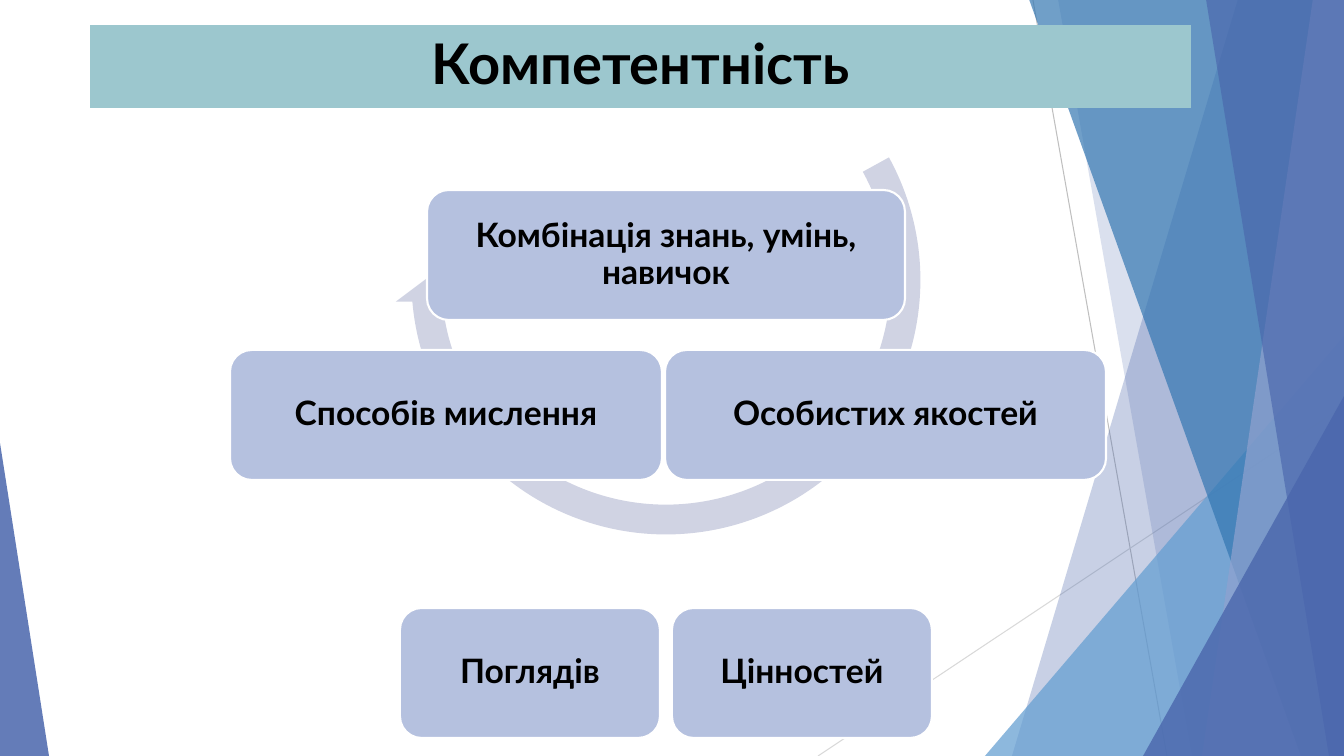
from dataclasses import dataclass

from pptx import Presentation
from pptx.dml.color import RGBColor
from pptx.enum.shapes import MSO_CONNECTOR, MSO_SHAPE
from pptx.enum.text import MSO_ANCHOR, PP_ALIGN
from pptx.oxml.ns import qn
from pptx.oxml.xmlchemy import OxmlElement
from pptx.util import Pt

WIDTH, HEIGHT = 1344, 756
SCALE = 12192000 / WIDTH


@dataclass(frozen=True)
class Theme:
    font: str = "Lato"
    text: str = "000000"
    banner: str = "9CC7CE"
    box: str = "B5C1DF"
    box_line: str = "FFFFFF"
    arrow: str = "D0D3E3"
    blue: str = "4A66AC"
    sky: str = "629DD1"
    ocean: str = "3477B2"
    mist: str = "90A2CF"
    ray_dark: str = "BFBFBF"
    ray_light: str = "D9D9D9"
    title_size: int = 40
    box_size: int = 24


THEME = Theme()


def px(n):
    return round(n * SCALE)


def rgb(color):
    return RGBColor.from_string(color)


def paint(sp, color, opacity=100):
    """Flat fill without outline or shadow."""
    sp.shadow.inherit = False
    sp.fill.solid()
    sp.fill.fore_color.rgb = rgb(color)
    if opacity < 100:
        alpha = OxmlElement("a:alpha")
        alpha.set("val", str(opacity * 1000))
        next(sp.element.spPr.iter(qn("a:srgbClr"))).append(alpha)
    sp.line.fill.background()


def add_preset(s, kind, x, y, w, h, color, opacity=100):
    sp = s.shapes.add_shape(kind, px(x), px(y), px(w), px(h))
    paint(sp, color, opacity)
    return sp


def write(sp, text, size):
    tf = sp.text_frame
    tf.word_wrap = True
    tf.vertical_anchor = MSO_ANCHOR.MIDDLE
    p = tf.paragraphs[0]
    p.text = text
    p.alignment = PP_ALIGN.CENTER
    p.line_spacing = 0.9
    p.font.name = THEME.font
    p.font.size = Pt(size)
    p.font.bold = True
    p.font.color.rgb = rgb(THEME.text)


def add_ray(s, x1, y1, x2, y2, color):
    ray = s.shapes.add_connector(MSO_CONNECTOR.STRAIGHT, px(x1), px(y1), px(x2), px(y2))
    ray.line.color.rgb = rgb(color)
    ray.line.width = Pt(0.75)
    ray.element.spPr.append(OxmlElement("a:effectLst"))


def add_facet(s, x, y, w, h, top, bottom, color, opacity):
    """Band from a slanted left edge to the right side of the box."""
    fb = s.shapes.build_freeform(x + top, y - 1, scale=SCALE)
    fb.add_line_segments([(x + w, y - 1), (x + w, y + h), (x + bottom, y + h)])
    paint(fb.convert_to_shape(), color, opacity)


def add_corner(s, x, y, w, h, apex, color, opacity):
    sp = add_preset(s, MSO_SHAPE.ISOSCELES_TRIANGLE, x, y, w, h, color, opacity)
    sp.adjustments[0] = apex


def add_backdrop(s, x, y, w, h):
    right, bottom = x + w, y + h
    add_ray(s, x + 1033, y, x + 1167, bottom, THEME.ray_dark)
    add_ray(s, right, y + 406, x + 818, bottom, THEME.ray_light)

    # Crystal on the right, from back to front
    add_facet(s, x, y, w, h, 1238, 1012, THEME.blue, 30)
    add_facet(s, x, y, w, h, 1058, 1192, THEME.blue, 20)
    add_corner(s, right - 359, bottom - 420, 359, 420, 1, THEME.sky, 72)
    add_facet(s, x, y, w, h, 1029, 1301, THEME.ocean, 70)
    add_facet(s, x, y, w, h, 1313, 1202, THEME.mist, 70)
    add_facet(s, x, y, w, h, 1206, 1329, THEME.blue, 65)
    add_corner(s, right - 201, bottom - 360, 201, 360, 1, THEME.blue, 80)

    # Wedge on the left
    add_corner(s, x, bottom - 313, 49, 313, 0, THEME.blue, 85)


def add_title(s, x, y, w, h):
    sp = s.shapes.title
    sp.left, sp.top, sp.width, sp.height = px(x), px(y), px(w), px(h)
    paint(sp, THEME.banner)
    write(sp, "Компетентність", THEME.title_size)
    sp.element.getparent().append(sp.element)  # in front of the backdrop


def add_cycle(s, x, y, w, h):
    # Circular arrow
    arrow = add_preset(s, MSO_SHAPE.CIRCULAR_ARROW, x + 165, y, 542, 542, THEME.arrow)
    for i, value in enumerate((0.055, 3.307, 104.873, 198.726, 0.058)):
        arrow.adjustments[i] = value

    # Competence parts: left, top, width
    box_h = 130
    low = h - box_h
    parts = [
        ("Комбінація знань, умінь, навичок", 197, 181, 478),
        ("Особистих якостей", 435, 341, 441),
        ("Цінностей", 442, low, 260),
        ("Поглядів", 170, low, 260),
        ("Способів мислення", 0, 341, 432),
    ]
    for text, left, top, width in parts:
        sp = add_preset(s, MSO_SHAPE.ROUNDED_RECTANGLE, x + left, y + top, width, box_h, THEME.box)
        sp.line.color.rgb = rgb(THEME.box_line)
        sp.line.width = Pt(1.5)
        write(sp, text, THEME.box_size)


def main():
    prs = Presentation()
    prs.slide_width, prs.slide_height = px(WIDTH), px(HEIGHT)
    s = prs.slides.add_slide(prs.slide_layouts[5])
    add_backdrop(s, 0, 0, WIDTH, HEIGHT)
    add_title(s, 90, 25, 1101, 83)
    add_cycle(s, 230, 9, 876, 729)
    prs.save("out.pptx")


if __name__ == "__main__":
    main()
